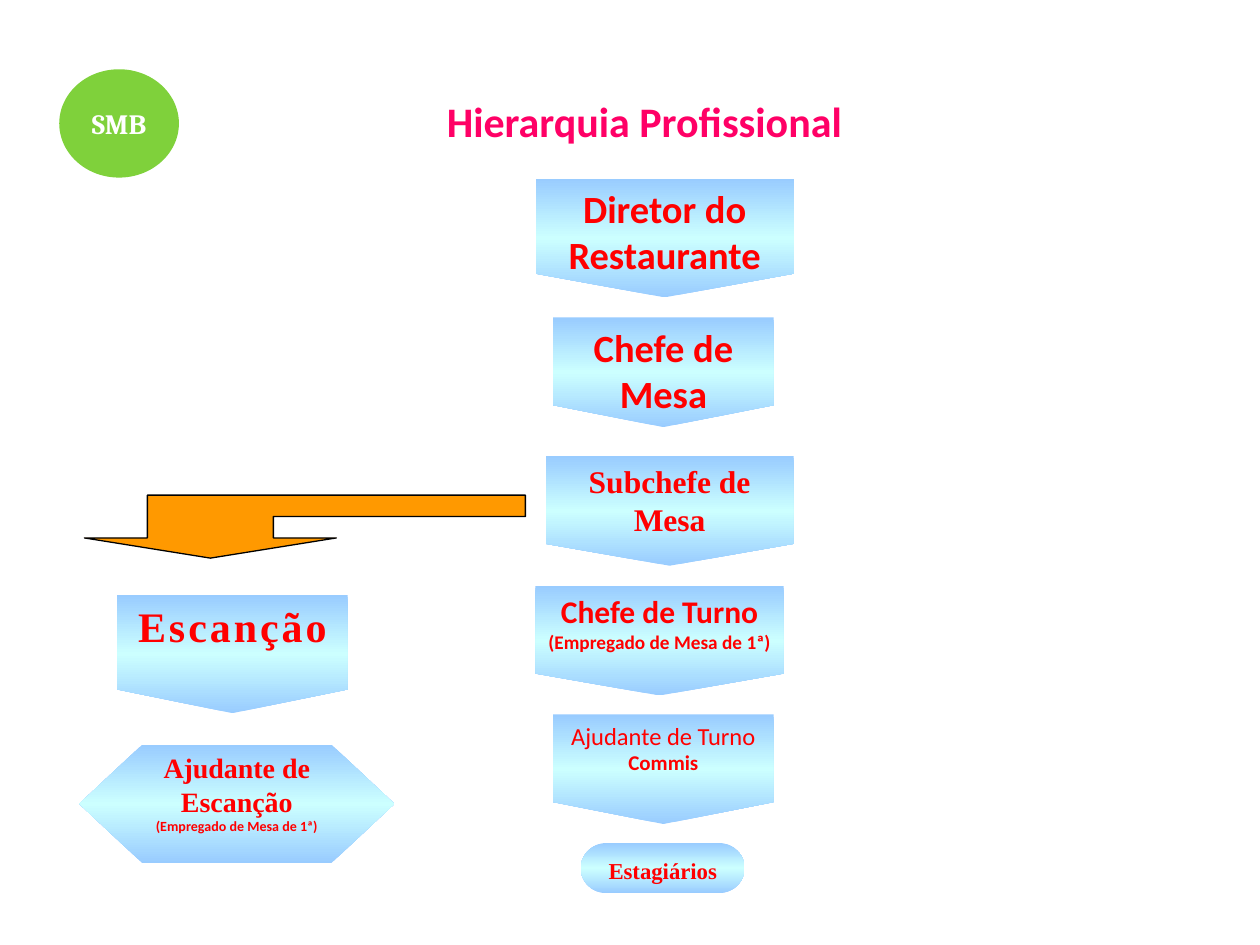
"""Build the restaurant staff hierarchy slide."""
from copy import deepcopy
from dataclasses import dataclass

from pptx import Presentation
from pptx.dml.color import RGBColor
from pptx.enum.shapes import MSO_SHAPE as Preset
from pptx.enum.text import MSO_ANCHOR as Anchor, PP_ALIGN as Align
from pptx.oxml.ns import qn
from pptx.util import Inches, Pt


@dataclass(frozen=True)
class Theme:
    sans: str = "Calibri"
    serif: str = "Times New Roman"
    badge_font: str = "Cambria"
    title: str = "FF0066"
    text: str = "FF0000"
    white: str = "FFFFFF"
    badge: str = "7FD13B"
    arrow: str = "FF9900"
    outline: str = "000000"
    edge: str = "99CCFF"
    middle: str = "CCFFFF"
    heading: int = 24
    large: int = 22
    medium: int = 18
    regular: int = 16
    helper: int = 14
    trainee: int = 13
    small: int = 12
    note: int = 11
    tiny: int = 8


theme = Theme()


def style_font(font, name, size, color, bold=True):
    font.name, font.size, font.bold = name, Pt(size), bold
    font.color.rgb = RGBColor.from_string(color)


def add_box(slide, preset, box, anchor=Anchor.TOP):
    shape = slide.shapes.add_shape(preset, *map(Inches, box))
    shape.shadow.inherit = False
    shape.line.fill.background()
    shape.text_frame.word_wrap = True
    shape.text_frame.vertical_anchor = anchor
    return shape


presentation = Presentation()
presentation.slide_width, presentation.slide_height = Inches(10), Inches(7.5)
slide = presentation.slides.add_slide(presentation.slide_layouts[5])

title = slide.shapes.title
title.left, title.top, title.width, title.height = map(Inches, (1.73, 0.71, 6.77, 0.5))
title.text_frame.text = "Hierarquia Profissional"
title.text_frame.vertical_anchor = Anchor.TOP
paragraph = title.text_frame.paragraphs[0]
paragraph.alignment = Align.CENTER
style_font(paragraph.font, theme.sans, theme.heading, theme.title)

badge = add_box(slide, Preset.OVAL, (0.47, 0.55, 0.95, 0.86), Anchor.MIDDLE)
badge.fill.solid()
badge.fill.fore_color.rgb = RGBColor.from_string(theme.badge)
badge.text_frame.text = "SMB"
paragraph = badge.text_frame.paragraphs[0]
paragraph.alignment = Align.CENTER
style_font(paragraph.font, theme.badge_font, theme.regular, theme.white)

corners = [(1.67, 4.43), (2.67, 4.27), (2.17, 4.27), (2.17, 4.1), (4.17, 4.1),
           (4.17, 3.93), (1.17, 3.93), (1.17, 4.27), (0.67, 4.27)]
points = [(Inches(x), Inches(y)) for x, y in corners]
builder = slide.shapes.build_freeform(*points[0])
builder.add_line_segments(points[1:], close=True)
arrow = builder.convert_to_shape()
arrow.shadow.inherit = False
arrow.fill.solid()
arrow.fill.fore_color.rgb = RGBColor.from_string(theme.arrow)
arrow.line.color.rgb = RGBColor.from_string(theme.outline)
arrow.line.width = Pt(0.75)

pennant = Preset.FLOWCHART_OFFPAGE_CONNECTOR
sans, serif = theme.sans, theme.serif
roles = [
    (pennant, (4.25, 1.42, 2.05, 0.94),
     [[("Diretor do Restaurante", sans, theme.large, True)]]),
    (pennant, (4.39, 2.52, 1.75, 0.87),
     [[("Chefe de", sans, theme.large, True)], [("Mesa", sans, theme.large, True)]]),
    (pennant, (4.33, 3.62, 1.97, 0.87),
     [[("Subchefe de Mesa", serif, theme.medium, True)]]),
    (pennant, (4.25, 4.65, 1.97, 0.87),
     [[("Chefe de Turno", sans, theme.medium, True), (" ", sans, theme.regular, True),
       ("(Empregado de Mesa de 1ª)", sans, theme.note, True)]]),
    (pennant, (4.39, 5.67, 1.75, 0.87),
     [[("Ajudante de Turno", sans, theme.helper, False)],
      [("Commis", sans, theme.small, True)]]),
    (Preset.FLOWCHART_TERMINATOR, (4.61, 6.69, 1.3, 0.4),
     [[("Estagiários", serif, theme.trainee, True)]]),
    (pennant, (0.93, 4.72, 1.83, 0.94),
     [[("Escanção", serif, theme.heading, True)]]),
    (Preset.FLOWCHART_PREPARATION, (0.63, 5.91, 2.5, 0.94),
     [[("Ajudante de Escanção", serif, theme.regular, True)],
      [("(Empregado de Mesa de 1ª)", sans, theme.tiny, True)]]),
]

for preset, box, lines in roles:
    shape = add_box(slide, preset, box)
    shape.fill.gradient()
    shape.fill.gradient_angle = 90
    stop_list = shape._element.spPr.find(qn("a:gradFill")).find(qn("a:gsLst"))
    stop_list.append(deepcopy(stop_list[0]))
    colors = (theme.edge, theme.middle, theme.edge)
    for index, (stop, color) in enumerate(zip(shape.fill.gradient_stops, colors)):
        stop.position = index / 2
        stop.color.rgb = RGBColor.from_string(color)
    frame = shape.text_frame
    for number, runs in enumerate(lines):
        paragraph = frame.add_paragraph() if number else frame.paragraphs[0]
        paragraph.alignment = Align.CENTER
        for text, name, size, bold in runs:
            run = paragraph.add_run()
            run.text = text
            font = paragraph.font if len(runs) == 1 else run.font
            style_font(font, name, size, theme.text, bold)
            if text == "Escanção":
                run.font._element.set("spc", "170")

presentation.save("out.pptx")
